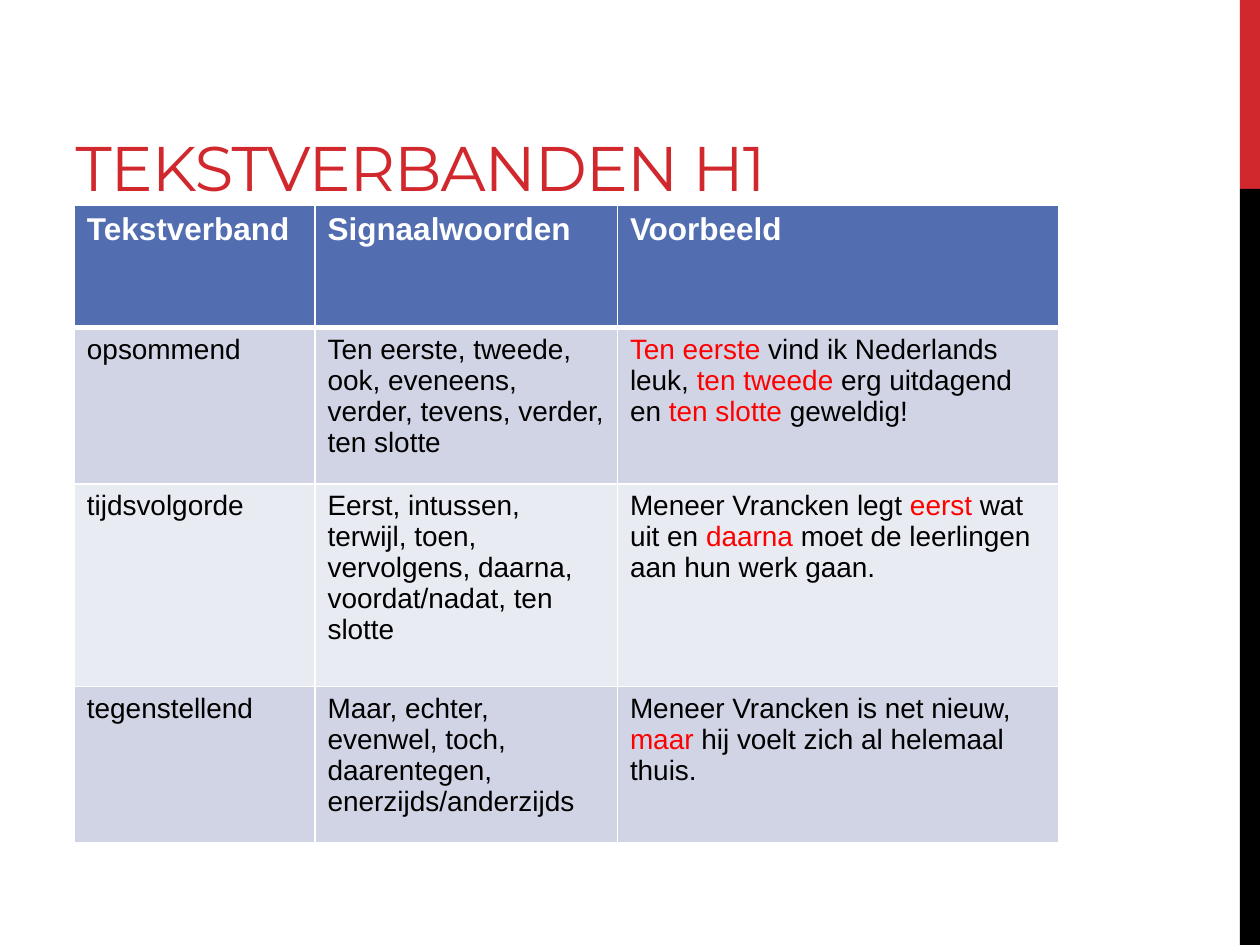
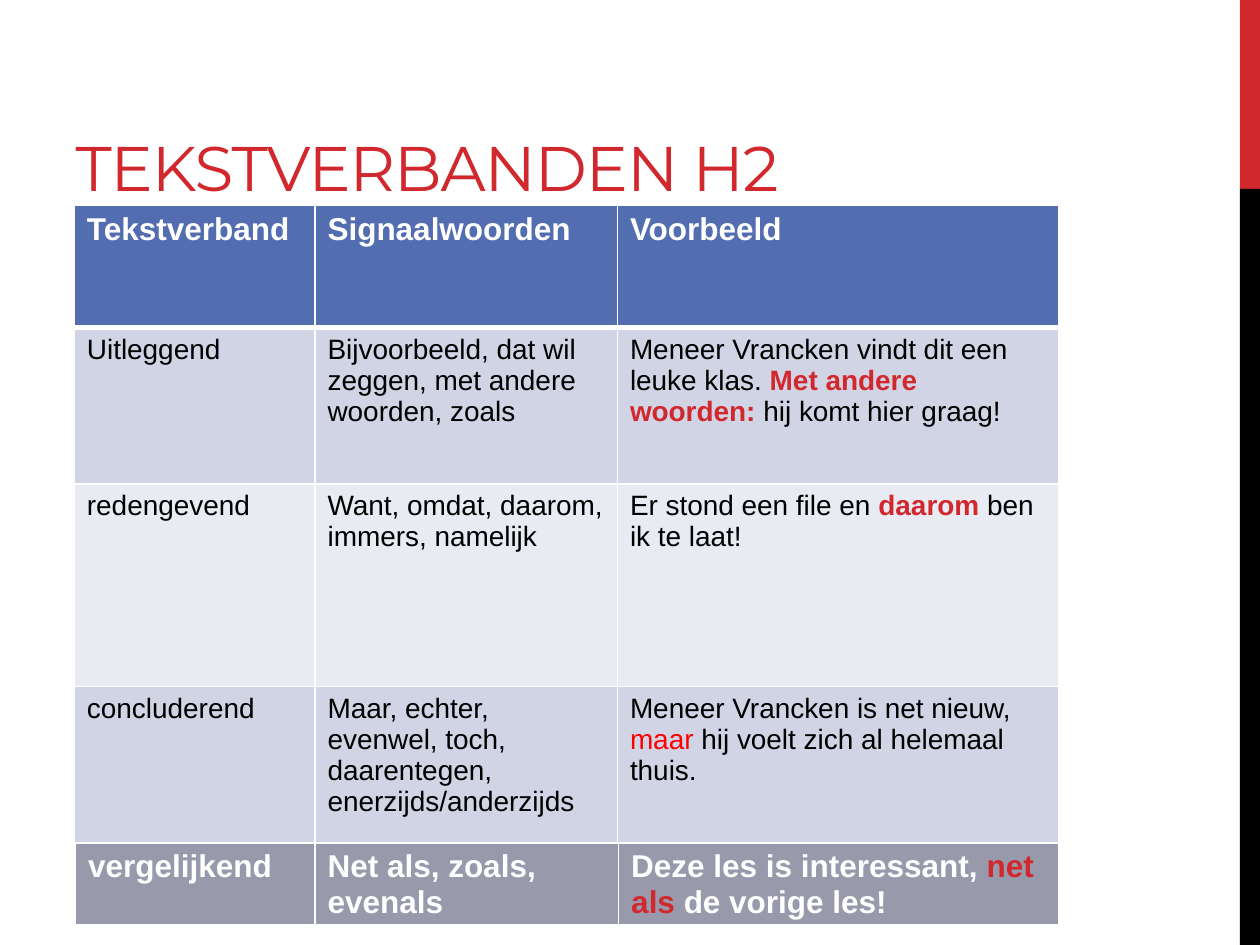
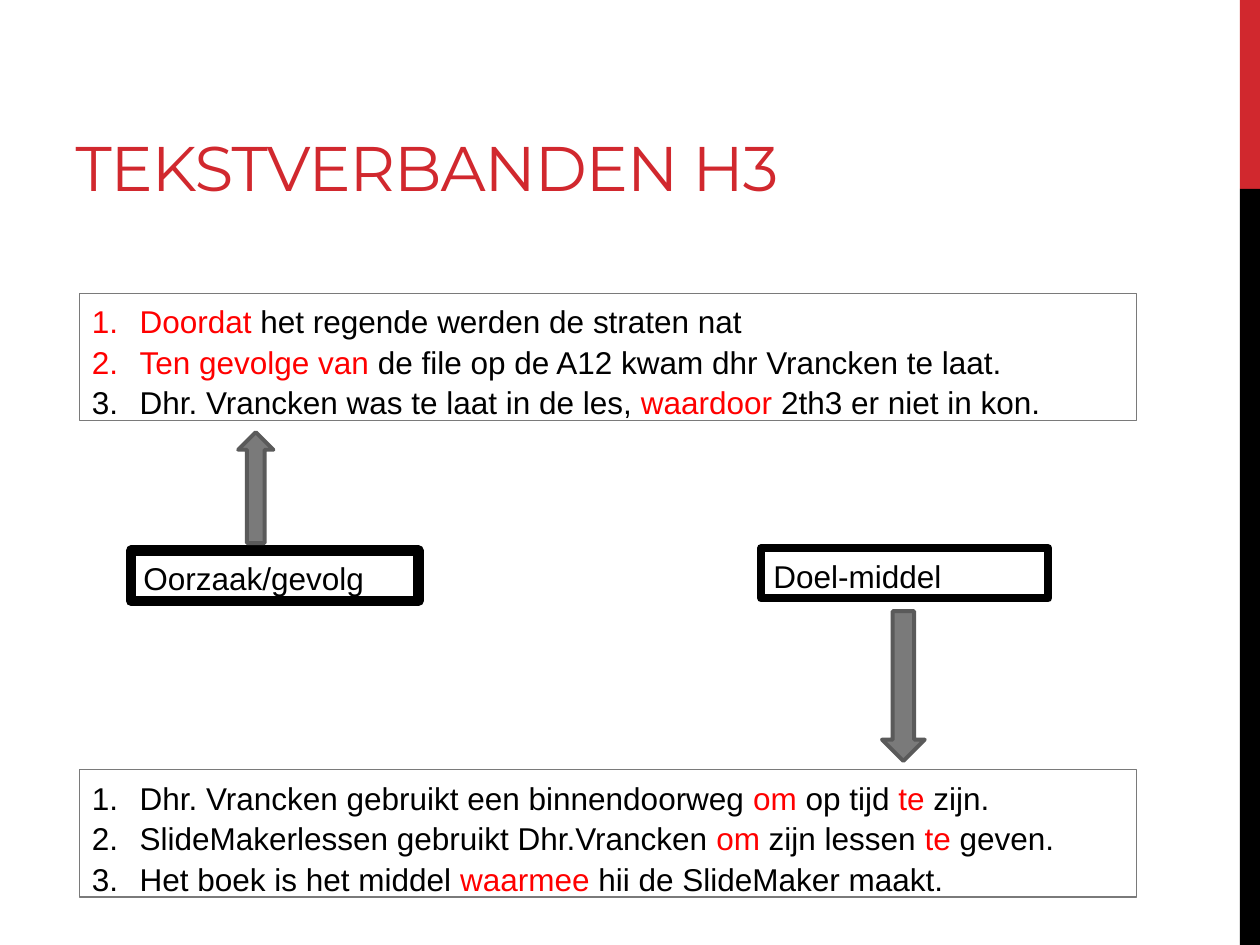
from dataclasses import dataclass

from lxml import etree
from pptx import Presentation
from pptx import util as u
from pptx.dml.color import RGBColor
from pptx.enum import shapes, text
from pptx.oxml import ns

Inches, Pt = u.Inches, u.Pt

# Content: *...* marks a signal word, *!...* a bold one
HEADER = ("Tekstverband", "Signaalwoorden", "Voorbeeld")
CONTRAST = (
    "Maar, echter, evenwel, toch, daarentegen, enerzijds/anderzijds",
    "Meneer Vrancken is net nieuw, *maar* hij voelt zich al helemaal thuis.",
)
TABLE_PAGES = [
    {
        "title": "TEKSTVERBANDEN H1",
        "rows": [
            ("opsommend",
             "Ten eerste, tweede, ook, eveneens, verder, tevens, verder, ten slotte",
             "*Ten eerste *vind ik Nederlands leuk, *ten tweede* erg uitdagend en "
             "*ten slotte *geweldig!"),
            ("tijdsvolgorde",
             "Eerst, intussen, terwijl, toen, vervolgens, daarna, voordat/nadat, ten slotte",
             "Meneer Vrancken legt *eerst *wat uit en *daarna *moet de leerlingen "
             "aan hun werk gaan."),
            ("tegenstellend", *CONTRAST),
        ],
        "extra": None,
    },
    {
        "title": "TEKSTVERBANDEN H2",
        "rows": [
            ("Uitleggend",
             "Bijvoorbeeld, dat wil zeggen, met andere woorden, zoals",
             "Meneer Vrancken vindt dit een leuke klas. *!Met andere woorden:* "
             "hij komt hier graag!"),
            ("redengevend",
             "Want, omdat, daarom, immers, namelijk",
             "Er stond een file en *!daarom* ben ik te laat!"),
            ("concluderend", *CONTRAST),
        ],
        "extra": ("vergelijkend", "Net als, zoals, evenals",
                  "Deze les is interessant, *!net als *de vorige les!"),
    },
]
DIAGRAM_TITLE = "TEKSTVERBANDEN H3"
EXAMPLES = [  # top, sentences
    (2.33, ["*Doordat* het regende werden de straten nat",
            "*Ten gevolge van *de file op de A12 kwam dhr Vrancken te laat.",
            "Dhr. Vrancken was te laat in de les,* waardoor *2th3 er niet in kon."]),
    (6.11, ["Dhr. Vrancken gebruikt een binnendoorweg *om* op tijd *te* zijn.",
            "SlideMakerlessen gebruikt Dhr.Vrancken *om* zijn lessen *te *geven.",
            "Het boek is het middel *waarmee *hii de SlideMaker maakt."]),
]
LABELS = [  # text, left, top, line width
    ("Oorzaak/gevolg", 1.04, 4.37, 6),
    ("Doel-middel", 6.04, 4.35, 4.5),
]
ARROWS = [  # preset, left, top, width, height
    (shapes.MSO_SHAPE.UP_ARROW, 1.89, 3.43, 0.28, 0.88),
    (shapes.MSO_SHAPE.DOWN_ARROW, 7, 4.85, 0.34, 1.19),
]


# Look
@dataclass(frozen=True)
class Theme:
    brand: str = "D1282E"
    signal: str = "FF0000"
    black: str = "000000"
    white: str = "FFFFFF"
    header: str = "526DB0"
    bands: tuple = ("D1D4E4", "E9EBF2")
    extra: str = "989AAC"
    grey: str = "7A7A7A"
    dark_grey: str = "5A5A5A"
    title_font: str = "Montserrat"
    body_font: str = "Arial"
    title_size: float = 36
    body_size: float = 18
    cell_size: float = 16
    body_spacing: float = 1.07


THEME = Theme()
COLUMNS = (1.91, 2.4, 3.5)
ROWS = (0.97, 1.24, 1.61, 1.24)
TABLE_LEFT, TABLE_TOP = 0.59, 1.63


def rgb(value):
    return RGBColor.from_string(value)


def style_span(span, size, color, bold=False, font=THEME.body_font):
    span.font.size = Pt(size)
    span.font.name = font
    span.font.bold = bold
    span.font.color.rgb = rgb(color)


def write(para, marked, size, color=THEME.black, bold=False):
    """Fill a paragraph; every second piece between stars is a signal word."""
    for index, piece in enumerate(marked.split("*")):
        if not piece:
            continue
        strong = index % 2 == 1 and piece.startswith("!")
        span = para.add_run()
        span.text = piece[1:] if strong else piece
        tint = color if index % 2 == 0 else THEME.brand if strong else THEME.signal
        style_span(span, size, tint, bold or strong)


def add_box(page, preset, place, fill=None, line=None, width=0):
    box = page.shapes.add_shape(preset, *map(Inches, place))
    box.shadow.inherit = False
    if fill:
        box.fill.solid()
        box.fill.fore_color.rgb = rgb(fill)
    else:
        box.fill.background()
    if line:
        box.line.color.rgb = rgb(line)
        box.line.width = Pt(width)
    else:
        box.line.fill.background()
    return box


def add_text_box(page, place, lines, line, width, numbered=False):
    box = add_box(page, shapes.MSO_SHAPE.RECTANGLE, place, None, line, width)
    frame = box.text_frame
    frame.word_wrap = True
    frame.auto_size = text.MSO_AUTO_SIZE.SHAPE_TO_FIT_TEXT
    frame.vertical_anchor = text.MSO_ANCHOR.TOP
    for index, sentence in enumerate(lines):
        para = frame.add_paragraph() if index else frame.paragraphs[0]
        para.alignment = text.PP_ALIGN.LEFT
        para.line_spacing = THEME.body_spacing
        write(para, sentence, THEME.body_size)
        if numbered:
            props = para._p.get_or_add_pPr()
            indent = Inches(0.38)
            props.set("marL", str(indent))
            props.set("indent", str(-indent))
            etree.SubElement(props, ns.qn("a:buAutoNum"), type="arabicPeriod")


# Tables
def style_cell(cell, fill, bottom):
    props = cell._tc.get_or_add_tcPr()
    for side, width in (("L", 1), ("R", 1), ("T", 1), ("B", bottom)):
        edge = etree.SubElement(props, ns.qn(f"a:ln{side}"), w=str(Pt(width)))
        paint = etree.SubElement(edge, ns.qn("a:solidFill"))
        etree.SubElement(paint, ns.qn("a:srgbClr"), val=THEME.white)
    cell.fill.solid()
    cell.fill.fore_color.rgb = rgb(fill)


def add_grid(page, left, top, columns, heights, rows, looks):
    """Each look is fill, text size, text colour, bold, bottom border."""
    place = map(Inches, (left, top, sum(columns), sum(heights)))
    table = page.shapes.add_table(len(rows), len(columns), *place).table
    for column, width in zip(table.columns, columns):
        column.width = Inches(width)
    for row, height, words, look in zip(table.rows, heights, rows, looks):
        row.height = Inches(height)
        fill, size, color, bold, bottom = look
        for cell, marked in zip(row.cells, words):
            write(cell.text_frame.paragraphs[0], marked, size, color, bold)
            style_cell(cell, fill, bottom)


def add_table_page(deck, layout, content):
    page = add_page(deck, layout, content["title"])
    rows = [HEADER, *content["rows"]]
    looks = [(THEME.header, THEME.body_size, THEME.white, True, 3)]
    looks += [(THEME.bands[index % 2], THEME.cell_size, THEME.black, False, 1)
              for index in range(len(content["rows"]))]
    add_grid(page, TABLE_LEFT, TABLE_TOP, COLUMNS, ROWS, rows, looks)
    if content["extra"]:
        look = (THEME.extra, THEME.body_size, THEME.white, True, 3)
        add_grid(page, 0.6, TABLE_TOP + sum(ROWS), (1.9, 2.41, 3.49), (0.64,),
                 [content["extra"]], [look])


# Shared layout
def prepare_layout(deck):
    layout = deck.slide_layouts.get_by_name("Title Only")
    for holder in list(layout.placeholders)[1:]:
        holder.element.getparent().remove(holder.element)
    title = layout.placeholders[0]
    title.left, title.top, title.width, title.height = map(
        Inches, (0.5, 0.17, 6.33, 1.5))
    title.text_frame.vertical_anchor = text.MSO_ANCHOR.BOTTOM
    return layout


def add_side_bands(page, layout):
    """Draw the side bands once and move them into the layout."""
    for top, height, color in ((0, 1.5, THEME.brand), (1.5, 6, THEME.black)):
        band = add_box(page, shapes.MSO_SHAPE.RECTANGLE,
                       (9.84, top, 0.16, height), color)
        layout.shapes.element.insert_element_before(band.element, "p:extLst")


def add_page(deck, layout, heading):
    page = deck.slides.add_slide(layout)
    frame = page.shapes.title.text_frame
    frame.text = heading
    frame.auto_size = text.MSO_AUTO_SIZE.NONE
    para = frame.paragraphs[0]
    para.alignment = text.PP_ALIGN.LEFT
    span = para.runs[0]
    style_span(span, THEME.title_size, THEME.brand, font=THEME.title_font)
    span.font._element.set("spc", "-60")
    return page


def add_diagram_page(deck, layout):
    page = add_page(deck, layout, DIAGRAM_TITLE)
    for top, sentences in EXAMPLES:
        add_text_box(page, (0.63, top, 8.39, 1.01), sentences, THEME.grey, 0.75, True)
    for label, left, top, width in LABELS:
        add_text_box(page, (left, top, 2.28, 0.4), [label], THEME.black, width)
    for preset, *place in ARROWS:
        add_box(page, preset, place, THEME.grey, THEME.dark_grey, 2.25)


def main():
    deck = Presentation()
    deck.slide_width, deck.slide_height = Inches(10), Inches(7.5)
    layout = prepare_layout(deck)
    for content in TABLE_PAGES:
        add_table_page(deck, layout, content)
    add_diagram_page(deck, layout)
    add_side_bands(deck.slides[0], layout)
    deck.save("out.pptx")


if __name__ == "__main__":
    main()
